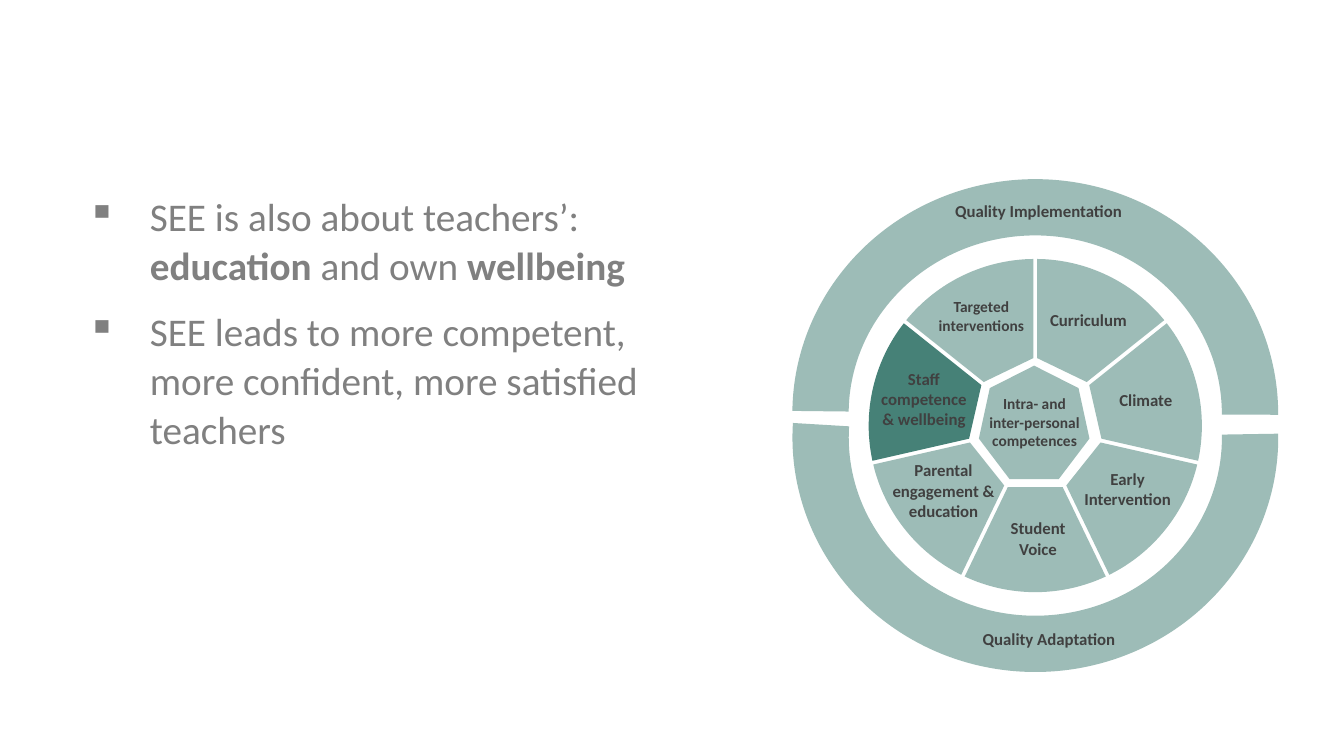
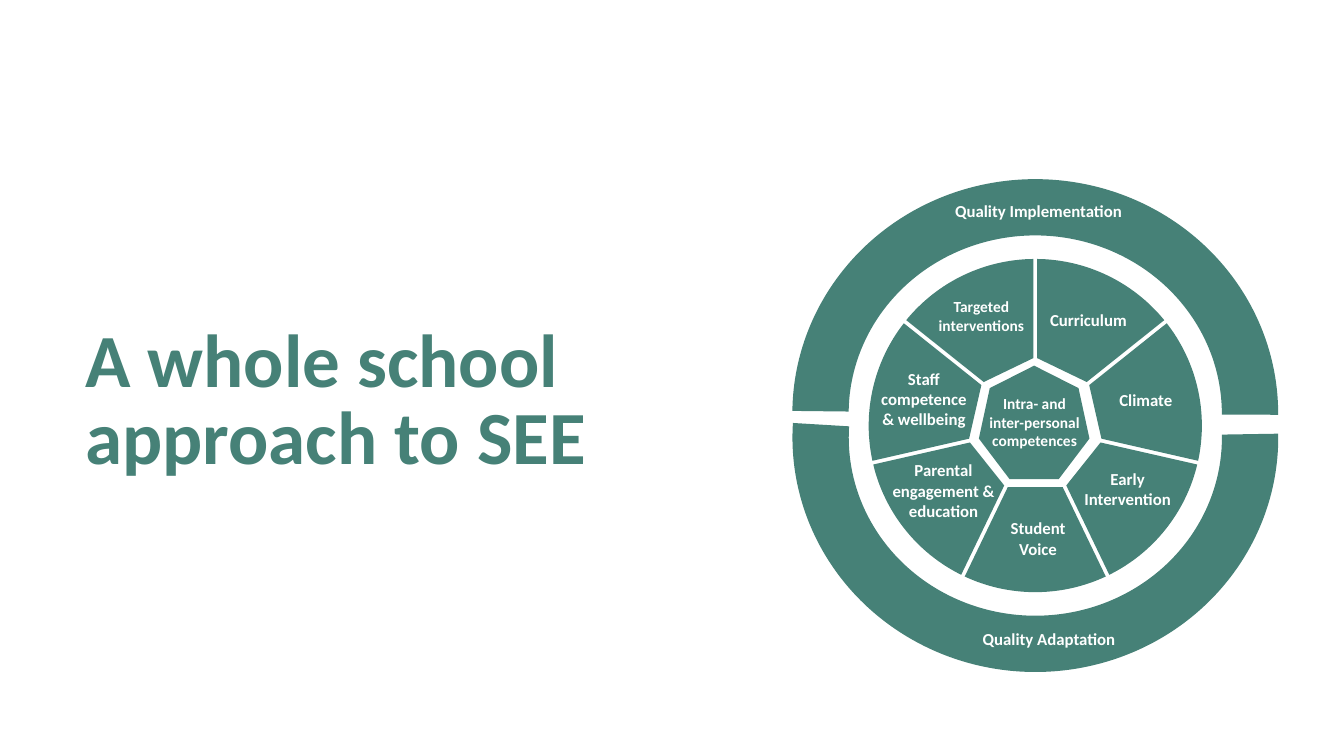
from math import asin, atan, cos, hypot, pi, sin, tan

from lxml.etree import SubElement
from pptx import Presentation
from pptx.dml.color import RGBColor
from pptx.enum.shapes import MSO_SHAPE
from pptx.enum.text import MSO_ANCHOR, PP_ALIGN
from pptx.oxml.ns import qn
from pptx.util import Pt

COLOURS = {
    "teal": "468177",
    "pale": "9DBCB7",
    "grey": "808080",
    "dark": "404040",
    "white": "FFFFFF",
}
FONT = "Calibri"

WHEEL_BOX = (566, 128, 347, 352)
ARC_HEIGHT = 335
SECTORS = 7
SECTOR_RADIUS = 119
CORE_APOTHEM = 44
HALF_GAP = 1.4
ARC_STEPS = 32
STAFF_SECTOR = 5

# Text, offset of its middle from the wheel centre, size, box width
LABELS = [
    ("Quality Implementation", 2.3, -153.5, 12, 140),
    ("Quality Adaptation", 9.8, 152, 12, 140),
    ("Curriculum", 38, -75.8, 12, 100),
    ("Climate", 79, -18.2, 12, 100),
    ("Early\nIntervention", 66, 45.2, 12, 100),
    ("Student\nVoice", 2, 80.5, 12, 100),
    ("Parental\nengagement &\neducation", -65.5, 46.3, 12, 100),
    ("Staff\ncompetence\n& wellbeing", -79.5, -19.2, 12, 100),
    ("Targeted\ninterventions", -38.5, -78.3, 11, 100),
    ("Intra- and inter-personal competences", -0.5, -2.3, 11, 86),
]

# Each bullet is a list of (text, bold); a newline is a line break
BULLETS = [
    [("SEE is also about teachers’:\n", False), ("education", True),
     (" and own ", False), ("wellbeing", True)],
    [("SEE leads to more competent, more confident, more satisfied teachers",
      False)],
]


def colour(name):
    return RGBColor.from_string(COLOURS[name])


def style_run(run, size, colour_name, bold):
    run.font.name = FONT
    run.font.size = Pt(size)
    run.font.bold = bold
    run.font.color.rgb = colour(colour_name)


def fill_shape(shape, colour_name):
    shape.shadow.inherit = False
    shape.fill.solid()
    shape.fill.fore_color.rgb = colour(colour_name)
    shape.line.fill.background()


def add_text_box(shapes, left, top, width, height):
    box = shapes.add_textbox(Pt(left), Pt(top), Pt(width), Pt(height))
    box.text_frame.word_wrap = True
    return box.text_frame


def add_sector(shapes, centre_x, centre_y, index, colour_name):
    """One slice between two spokes, cut off by the seven-sided core."""
    half = pi / SECTORS
    middle = (2 * index + 1) * half
    outer = half - asin(HALF_GAP / SECTOR_RADIUS)
    corner = CORE_APOTHEM * tan(half) - HALF_GAP / cos(half)
    inner = atan(corner / CORE_APOTHEM)
    inner_radius = hypot(CORE_APOTHEM, corner)

    def point(angle, radius):
        return (Pt(centre_x + radius * sin(middle + angle)),
                Pt(centre_y - radius * cos(middle + angle)))

    arc = [point(outer * (2 * step / ARC_STEPS - 1), SECTOR_RADIUS)
           for step in range(ARC_STEPS + 1)]
    core_edge = [point(inner, inner_radius), point(-inner, inner_radius)]
    builder = shapes.build_freeform(*arc[0])
    builder.add_line_segments(arc[1:] + core_edge, close=True)
    fill_shape(builder.convert_to_shape(), colour_name)


def add_label(shapes, centre_x, centre_y, text, size, width, colour_name):
    height = 52
    frame = add_text_box(shapes, centre_x - width / 2, centre_y - height / 2,
                         width, height)
    frame.vertical_anchor = MSO_ANCHOR.MIDDLE
    frame.text = text
    for paragraph in frame.paragraphs:
        paragraph.alignment = PP_ALIGN.CENTER
        for run in paragraph.runs:
            style_run(run, size, colour_name, True)


def add_wheel(slide, box, base, text_colour, highlights=None):
    left, top, width, height = box
    centre_x, centre_y = left + width / 2, top + height / 2
    highlights = highlights or {}
    shapes = slide.shapes.add_group_shape().shapes

    # Sectors and core
    for index in range(SECTORS):
        add_sector(shapes, centre_x, centre_y, index,
                   highlights.get(index, base))
    core = shapes.add_shape(MSO_SHAPE.HEPTAGON, Pt(centre_x - 40.3),
                            Pt(centre_y - 42.8), Pt(79), Pt(81))
    fill_shape(core, base)

    # Outer ring in two halves
    halves = [(top, 0, (108.39, 0.16, 0.12)),
              (top + height - ARC_HEIGHT, 180, (107.46, 2.06, 0.12))]
    for arc_top, rotation, adjustments in halves:
        arc = shapes.add_shape(MSO_SHAPE.BLOCK_ARC, Pt(left), Pt(arc_top),
                               Pt(width), Pt(ARC_HEIGHT))
        arc.rotation = rotation
        for index, value in enumerate(adjustments):
            arc.adjustments[index] = value
        fill_shape(arc, base)

    # Labels
    for text, offset_x, offset_y, size, label_width in LABELS:
        add_label(shapes, centre_x + offset_x, centre_y + offset_y, text,
                  size, label_width, text_colour)


def add_bullets(slide, box):
    frame = add_text_box(slide.shapes, *box)
    for index, parts in enumerate(BULLETS):
        paragraph = frame.paragraphs[0] if index == 0 else frame.add_paragraph()
        properties = paragraph._p.get_or_add_pPr()
        properties.set("marL", str(Pt(44.6)))
        properties.set("indent", str(-Pt(44.6)))
        SubElement(properties, qn("a:buChar")).set("char", "▪")
        paragraph.line_spacing = Pt(35)
        paragraph.space_after = Pt(12)
        for text, bold in parts:
            run = paragraph.add_run()
            run.text = text.rstrip("\n")
            style_run(run, 28, "grey", bold)
            if text.endswith("\n"):
                paragraph.add_line_break()


def add_title(slide, box, text):
    frame = add_text_box(slide.shapes, *box)
    frame.text = text
    paragraph = frame.paragraphs[0]
    paragraph.line_spacing = Pt(55)
    style_run(paragraph.runs[0], 53.6, "teal", True)


def main():
    presentation = Presentation()
    presentation.slide_width, presentation.slide_height = Pt(960), Pt(540)
    blank = presentation.slide_layouts[6]

    # Teachers
    slide = presentation.slides.add_slide(blank)
    add_bullets(slide, (55.4, 132.5, 450, 319))
    add_wheel(slide, WHEEL_BOX, "pale", "dark", {STAFF_SECTOR: "teal"})

    # Whole school approach
    slide = presentation.slides.add_slide(blank)
    add_title(slide, (54, 229, 493, 192), "A whole school approach to SEE")
    add_wheel(slide, WHEEL_BOX, "teal", "white")

    presentation.save("out.pptx")


if __name__ == "__main__":
    main()
